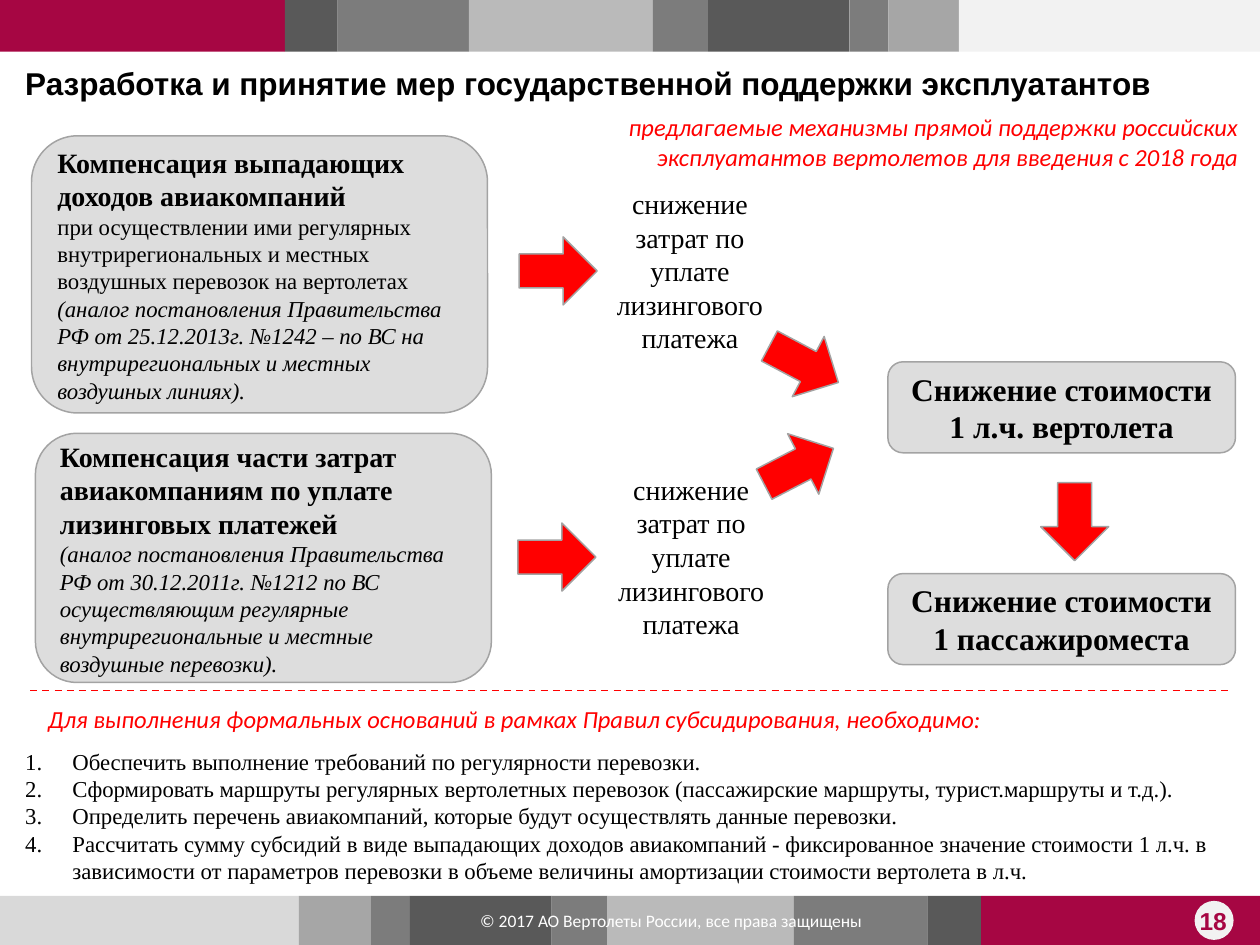
from dataclasses import dataclass, field
from itertools import pairwise
from typing import NamedTuple

from lxml.etree import SubElement
from pptx import Presentation
from pptx.dml.color import RGBColor
from pptx.enum.dml import MSO_LINE
from pptx.enum.shapes import MSO_CONNECTOR, MSO_SHAPE
from pptx.enum.text import MSO_ANCHOR, MSO_AUTO_SIZE, PP_ALIGN
from pptx.oxml.ns import qn
from pptx.util import Pt


class Style(NamedTuple):
    font: str
    size: float
    color: str
    bold: bool = False
    italic: bool = False


class Box(NamedTuple):
    left: float
    top: float
    width: float
    height: float


@dataclass(frozen=True)
class Theme:
    crimson: str = "A60643"
    red: str = "FF0000"
    white: str = "FFFFFF"
    pale: str = "F2F2F2"
    silver: str = "D9D9D9"
    light: str = "BABABA"
    gray: str = "A6A6A6"
    medium: str = "7C7C7C"
    dark: str = "595959"
    panel: str = "DDDDDD"
    outline: str = "A3A3A3"
    outline_width: float = 0.85
    title: Style = Style("Arial", 18, "000000", bold=True)
    number: Style = Style("Arial", 14, "A60643", bold=True)
    copyright: Style = Style("Calibri", 10, "FFFFFF")
    remark: Style = Style("Calibri", 14, "FF0000", italic=True)
    heading: Style = Style("Times New Roman", 16, "000000", bold=True)
    effect: Style = Style("Times New Roman", 16, "000000")
    result: Style = Style("Times New Roman", 18, "000000", bold=True)
    body: Style = Style("Times New Roman", 13, "000000")
    source: Style = Style("Times New Roman", 13, "000000", italic=True)


THEME = Theme()


class Line(NamedTuple):
    text: str
    style: Style


@dataclass(frozen=True)
class Panel:
    box: Box
    lines: list[Line]
    alignment: PP_ALIGN = PP_ALIGN.LEFT


@dataclass(frozen=True)
class Label:
    box: Box
    line: Line
    alignment: PP_ALIGN = PP_ALIGN.CENTER
    anchor: MSO_ANCHOR = MSO_ANCHOR.TOP


@dataclass(frozen=True)
class Arrow:
    left: float
    top: float
    rotation: float = 0


@dataclass(frozen=True)
class Strip:
    top: float
    edges: list[float]
    colors: list[str] = field(default_factory=list)


EFFECT = Line("снижение затрат по уплате лизингового платежа", THEME.effect)

STRIPS = [
    Strip(0, [-0.7, 162.8, 193, 268, 373.1, 404.6, 485.3, 507.6, 548, 720],
          [THEME.crimson, THEME.dark, THEME.medium, THEME.light, THEME.medium,
           THEME.dark, THEME.medium, THEME.gray, THEME.pale]),
    Strip(512, [-0.7, 170.8, 211.6, 234.2, 315.2, 347, 453.6, 530, 560.6, 720],
          [THEME.silver, THEME.gray, THEME.medium, THEME.dark, THEME.medium,
           THEME.light, THEME.medium, THEME.dark, THEME.crimson]),
]

PANELS = [
    Panel(Box(20.2, 247.6, 260.6, 142.4), [
        Line("Компенсация части затрат авиакомпаниям по уплате лизинговых платежей", THEME.heading),
        Line("(аналог постановления Правительства РФ от 30.12.2011г. №1212 по ВС осуществляющим "
             "регулярные внутрирегиональные и местные воздушные перевозки).", THEME.source),
    ]),
    Panel(Box(18, 77.6, 260.6, 158.4), [
        Line("Компенсация выпадающих доходов авиакомпаний", THEME.heading),
        Line("при осуществлении ими регулярных внутрирегиональных и местных воздушных перевозок "
             "на вертолетах", THEME.body),
        Line("(аналог постановления Правительства РФ от 25.12.2013г. №1242 – по ВС на "
             "внутрирегиональных и местных воздушных линиях).", THEME.source),
    ]),
    Panel(Box(507.4, 206.8, 198.6, 52),
          [Line("Снижение стоимости 1 л.ч. вертолета", THEME.result)], PP_ALIGN.CENTER),
    Panel(Box(507.4, 327.8, 198.6, 52),
          [Line("Снижение стоимости 1 пассажироместа", THEME.result)], PP_ALIGN.CENTER),
]

LABELS = [
    Label(Box(678.2, 514, 30.2, 28.8), Line("18", THEME.number)),
    Label(Box(241.2, 516.2, 284.4, 20.9),
          Line("© 2017 АО Вертолеты России, все права защищены", THEME.copyright)),
    Label(Box(352.1, 52.6, 362.9, 56.9),
          Line("предлагаемые механизмы прямой поддержки российских эксплуатантов вертолетов "
               "для введения с 2018 года", THEME.remark), PP_ALIGN.RIGHT, MSO_ANCHOR.MIDDLE),
    Label(Box(20.2, 396.7, 682.6, 28.1),
          Line("Для выполнения формальных оснований в рамках Правил субсидирования, необходимо:",
               THEME.remark), PP_ALIGN.LEFT, MSO_ANCHOR.MIDDLE),
    Label(Box(341.3, 266.4, 107.3, 104.4), EFFECT),
    Label(Box(340.6, 103, 107.3, 104.4), EFFECT),
]

ARROWS = [
    Arrow(299.5, 132.5, 270),
    Arrow(298.8, 296, 270),
    Arrow(594.7, 275.8),
    Arrow(439.9, 185.8, 297.9),
    Arrow(437, 244.1, 242.7),
]

REQUIREMENTS = [
    "Обеспечить выполнение требований по регулярности перевозки.",
    "Сформировать маршруты регулярных вертолетных перевозок (пассажирские маршруты, "
    "турист.маршруты и т.д.).",
    "Определить перечень авиакомпаний, которые будут осуществлять данные перевозки.",
    "Рассчитать сумму субсидий в виде выпадающих доходов авиакомпаний - фиксированное значение "
    "стоимости 1 л.ч. в зависимости от параметров перевозки в объеме величины амортизации "
    "стоимости вертолета в л.ч.",
]


def place(shape, box: Box) -> None:
    shape.left, shape.top, shape.width, shape.height = map(Pt, box)


def write(frame, lines: list[Line], alignment: PP_ALIGN, anchor: MSO_ANCHOR,
          numbered: bool = False) -> None:
    frame.word_wrap = True
    frame.auto_size = MSO_AUTO_SIZE.NONE
    frame.vertical_anchor = anchor
    for index, line in enumerate(lines):
        paragraph = frame.add_paragraph() if index else frame.paragraphs[0]
        paragraph.alignment = alignment
        paragraph.space_before = Pt(0)
        if numbered:
            properties = paragraph._p.get_or_add_pPr()
            properties.set("marL", str(Pt(27)))
            properties.set("indent", str(-Pt(27)))
            SubElement(properties, qn("a:buFont"), typeface="+mj-lt")
            SubElement(properties, qn("a:buAutoNum"), type="arabicPeriod")
        run = paragraph.add_run()
        run.text = line.text
        run.font.name = line.style.font
        run.font.size = Pt(line.style.size)
        run.font.bold = line.style.bold
        run.font.italic = line.style.italic
        run.font.color.rgb = RGBColor.from_string(line.style.color)


def add_figure(slide, kind: MSO_SHAPE, box: Box, fill: str, outlined: bool = False):
    shape = slide.shapes.add_shape(kind, *map(Pt, box))
    shape.shadow.inherit = False
    shape.fill.solid()
    shape.fill.fore_color.rgb = RGBColor.from_string(fill)
    if outlined:
        shape.line.color.rgb = RGBColor.from_string(THEME.outline)
        shape.line.width = Pt(THEME.outline_width)
    else:
        shape.line.fill.background()
    return shape


def add_divider(slide, left: float, right: float, top: float) -> None:
    divider = slide.shapes.add_connector(
        MSO_CONNECTOR.STRAIGHT, Pt(left), Pt(top), Pt(right), Pt(top))
    divider.line.color.rgb = RGBColor.from_string(THEME.red)
    divider.line.width = Pt(1)
    divider.line.dash_style = MSO_LINE.DASH
    SubElement(divider._element.spPr, qn("a:effectLst"))


def main() -> None:
    presentation = Presentation()
    presentation.slide_width, presentation.slide_height = Pt(720), Pt(540)
    slide = presentation.slides.add_slide(presentation.slide_layouts[1])
    title, body = slide.placeholders

    place(title, Box(14.4, 36.7, 691.9, 45.4))
    frame = title.text_frame
    frame.margin_left = frame.margin_top = frame.margin_right = frame.margin_bottom = 0
    write(frame, [Line("Разработка и принятие мер государственной поддержки эксплуатантов",
                       THEME.title)], PP_ALIGN.LEFT, MSO_ANCHOR.TOP)
    place(body, Box(7.2, 423.4, 689.8, 85.7))
    write(body.text_frame, [Line(text, THEME.body) for text in REQUIREMENTS],
          PP_ALIGN.LEFT, MSO_ANCHOR.TOP, numbered=True)

    for strip in STRIPS:
        for (left, right), color in zip(pairwise(strip.edges), strip.colors):
            add_figure(slide, MSO_SHAPE.RECTANGLE, Box(left, strip.top, right - left, 29.5), color)
    add_figure(slide, MSO_SHAPE.OVAL, Box(682.6, 514.8, 22.3, 22.3), THEME.pale)

    for panel in PANELS:
        shape = add_figure(slide, MSO_SHAPE.ROUNDED_RECTANGLE, panel.box, THEME.panel, True)
        write(shape.text_frame, panel.lines, panel.alignment, MSO_ANCHOR.MIDDLE)
    for label in LABELS:
        text_box = slide.shapes.add_textbox(*map(Pt, label.box))
        write(text_box.text_frame, [label.line], label.alignment, label.anchor)
    for arrow in ARROWS:
        shape = add_figure(slide, MSO_SHAPE.DOWN_ARROW,
                           Box(arrow.left, arrow.top, 38.9, 44.6), THEME.red, True)
        shape.rotation = arrow.rotation
    add_divider(slide, 17.3, 702.7, 394.6)

    presentation.save("out.pptx")


if __name__ == "__main__":
    main()
